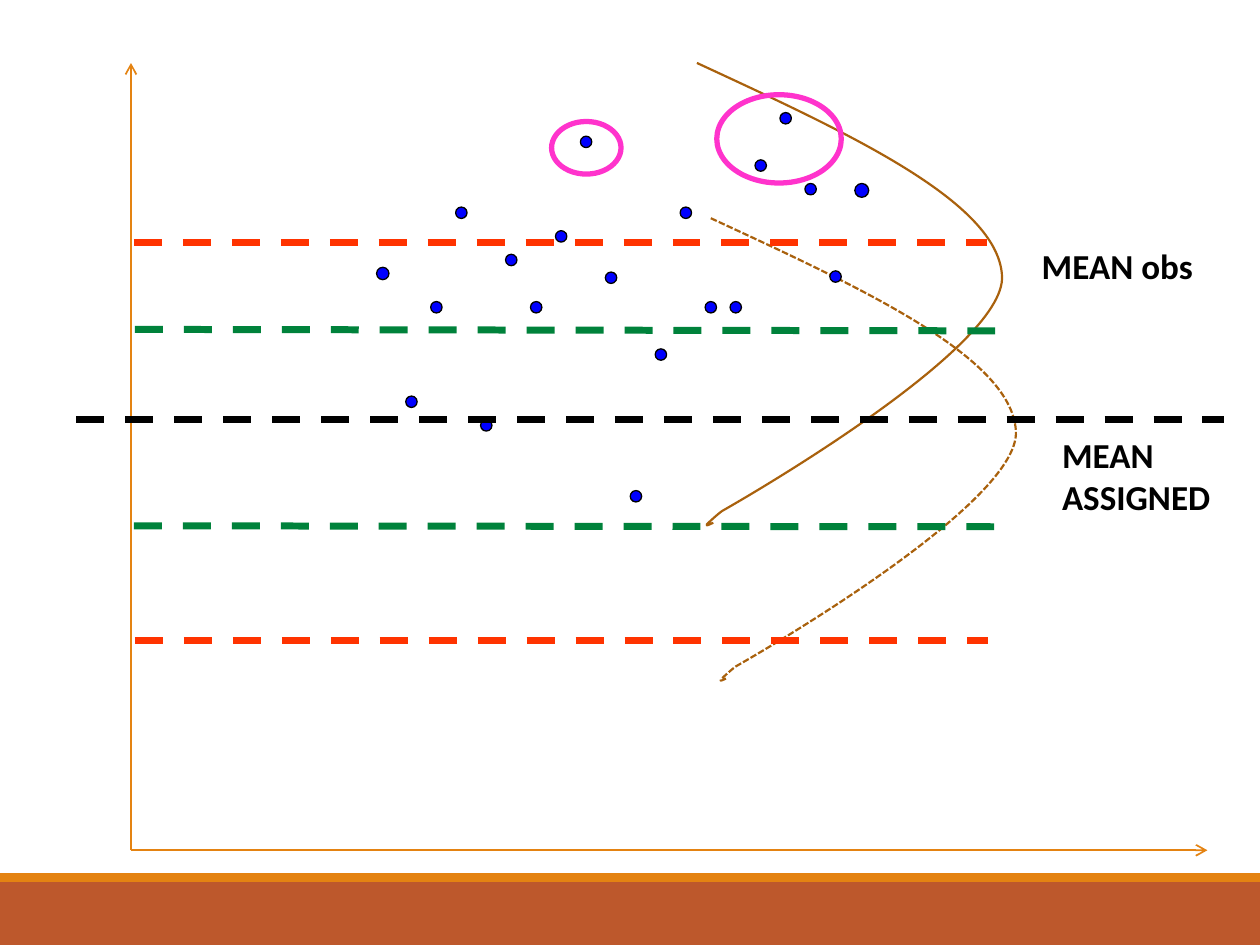
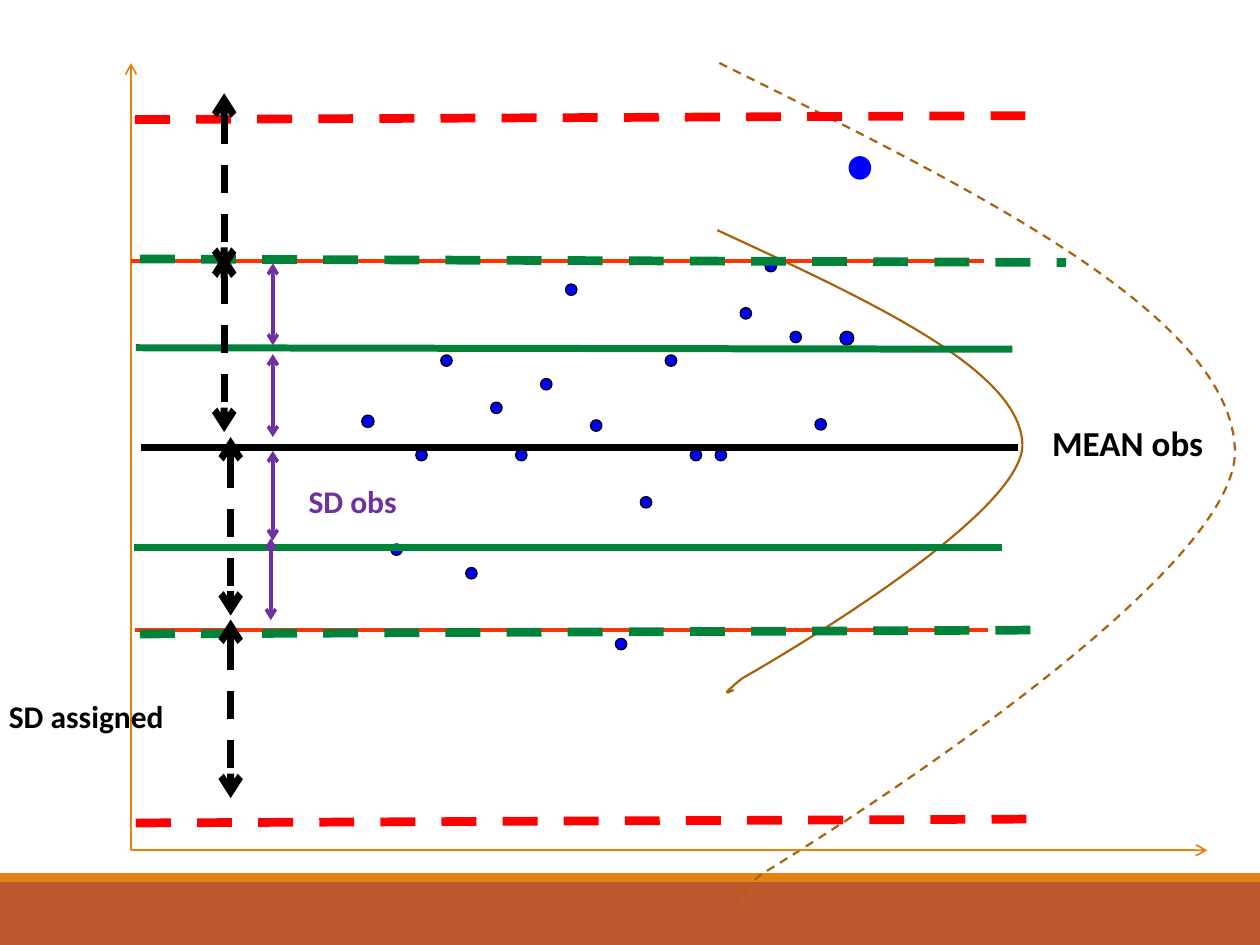
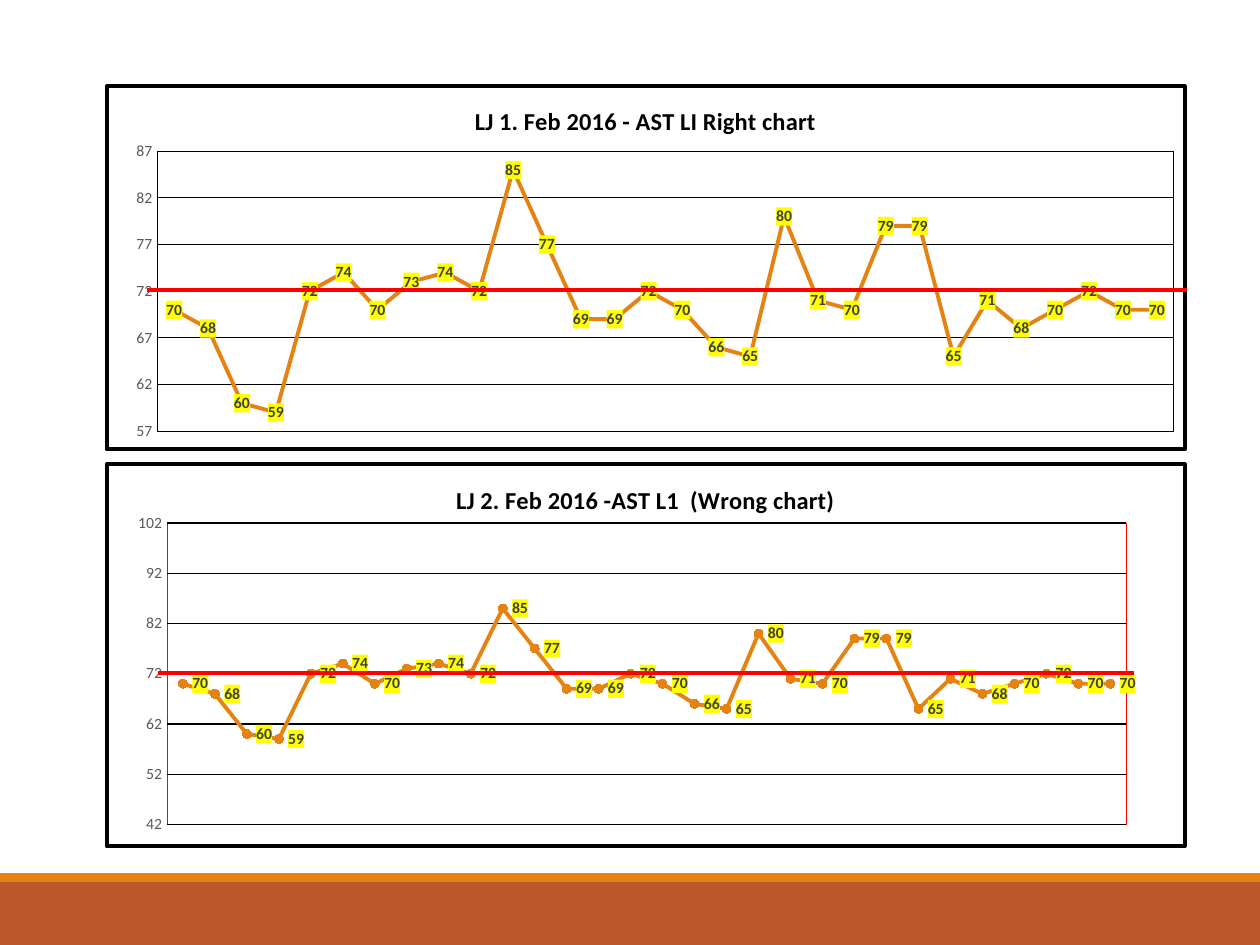
from pptx import Presentation
from pptx.chart.data import CategoryChartData
from pptx.dml.color import RGBColor
from pptx.enum.chart import XL_CHART_TYPE, XL_LABEL_POSITION, XL_MARKER_STYLE, XL_TICK_MARK
from pptx.enum.dml import MSO_LINE
from pptx.enum.shapes import MSO_CONNECTOR, MSO_SHAPE
from pptx.oxml import parse_xml
from pptx.oxml.ns import nsdecls
from pptx.util import Cm, Pt

RECTANGLE, OVAL = MSO_SHAPE.RECTANGLE, MSO_SHAPE.OVAL
STRAIGHT = MSO_CONNECTOR.STRAIGHT
DASH, SHORT_DASH = MSO_LINE.DASH, MSO_LINE.SQUARE_DOT
CIRCLE, NO_TICKS = XL_MARKER_STYLE.CIRCLE, XL_TICK_MARK.NONE
CENTER, RIGHT = XL_LABEL_POSITION.CENTER, XL_LABEL_POSITION.RIGHT
LINE, STACKED_LINE = XL_CHART_TYPE.LINE_MARKERS, XL_CHART_TYPE.LINE_MARKERS_STACKED

FONT = "Calibri"
HEX = {
    "orange": "E48312", "rust": "BD582C", "brown": "A9610D", "blue": "0000FF",
    "black": "000000", "white": "FFFFFF", "vermilion": "FF3300", "red": "FF0000",
    "green": "00823B", "purple": "7030A0", "pink": "FF33CC", "yellow": "FFFF00",
    "axis grey": "595959", "label grey": "404040",
}
COLOR = {name: RGBColor.from_string(value) for name, value in HEX.items()}


def add_line(slide, x1, y1, x2, y2, color, width, dash=None, arrows=()):
    line = slide.shapes.add_connector(STRAIGHT, Cm(x1), Cm(y1), Cm(x2), Cm(y2))
    line.line.color.rgb = COLOR[color]
    line.line.width = Pt(width)
    if dash:
        line.line.dash_style = dash
    properties = line.element.spPr
    for end in arrows:
        properties.ln.append(parse_xml(f'<a:{end} {nsdecls("a")} type="arrow"/>'))
    properties.append(parse_xml(f'<a:effectLst {nsdecls("a")}/>'))


def area_format(fill=None, border=None, width=0.5):
    """Fill and border for a part of a chart."""
    paint = {key: f'<a:solidFill><a:srgbClr val="{HEX[key]}"/></a:solidFill>' if key
             else "<a:noFill/>" for key in (fill, border)}
    return parse_xml(f'<c:spPr {nsdecls("c", "a")}>{paint[fill]}'
                     f'<a:ln w="{Pt(width)}">{paint[border]}</a:ln></c:spPr>')


prs = Presentation()
prs.slide_width, prs.slide_height = Cm(25.4), Cm(19.05)
blank = prs.slide_layouts[6]
shifted_mean, wide_sd, levey_jennings = [prs.slides.add_slide(blank) for _ in range(3)]

# Bottom bands, placed on the master
master_tree = prs.slide_master.element.cSld.spTree
for number, (top, height, color) in enumerate([(17.78, 1.27, "rust"), (17.6, 0.18, "orange")]):
    band = shifted_mean.shapes.add_shape(RECTANGLE, 0, Cm(top), prs.slide_width, Cm(height))
    band.shadow.inherit = False
    band.fill.solid()
    band.fill.fore_color.rgb = COLOR[color]
    band.line.fill.background()
    band.element.nvSpPr.cNvPr.id = 101 + number
    master_tree.append(band.element)

# Control results: (column, level, diameter)
LEVELS = [12, 8, 4, 13, 6, 8, 5, 1, 6.75, 16, 10, 4, 8, 8, 2, 0, 3, 6.7]
RESULTS = [(column, level, 0.23) for column, level in enumerate(LEVELS)]
RESULTS += [(18, 3, 0.28), (-1.17, 6.55, 0.25)]
COLUMN_STEP, LEVEL_STEP = 8.55 / 17, 7.62 / 16

# Bell curve on its side: a start point, then three points for each cubic segment
BELL = [(0, 0), (3.02, 1.4), (6.07, 2.79), (6.15, 4.29), (6.25, 5.79), (0.53, 9.02),
        (0.53, 9.02), (0.48, 9.04), (0.25, 9.25), (0.2, 9.3), (0.18, 9.35), (0.25, 9.3),
        (0.33, 9.27)]

TAIL, BOTH = ["tailEnd"], ["headEnd", "tailEnd"]
AXES = [(2.64, 17.14, 2.64, 1.27, "orange", 1, None, TAIL),
        (2.64, 17.14, 24.34, 17.14, "orange", 1, None, TAIL)]
SD_ASSIGNED = [(x, y, x, y + 3.6, "black", 4, DASH, BOTH)
               for x, y in [(4.65, 12.49), (4.65, 8.81), (4.52, 1.88), (4.52, 5.11)]]
SD_OBSERVED = [(x, top, x, bottom, "purple", 2, None, BOTH)
               for x, top, bottom in [(5.5, 9.09, 10.9), (5.5, 7.14, 8.81),
                                      (5.5, 5.31, 6.96), (5.46, 10.85, 12.5)]]

control_charts = [
    {"slide": shifted_mean, "first result": (8.18, 2.27),
     "curves": [(14.05, 1.27, 1, 1, None), (14.33, 4.4, 1, 1, SHORT_DASH)],
     "marks": [(11.12, 2.45, 1.4, 1.06, None, "pink", 3),
               (14.45, 1.91, 2.51, 1.78, None, "pink", 3)],
     "lines": [(1.54, 8.46, 24.67, 8.46, "black", 4, DASH),
               (2.7, 4.88, 19.89, 4.88, "vermilion", 4, DASH),
               (2.72, 12.91, 19.91, 12.91, "vermilion", 4, DASH),
               (2.72, 6.64, 20.4, 6.67, "green", 4, DASH),
               (2.7, 10.6, 20.38, 10.62, "green", 4, DASH)],
     "labels": [("MEAN obs", 20.75, 4.8, 3.61, 1.12, 20, "black"),
                ("MEAN ASSIGNED", 21.16, 8.61, 3.61, 1.96, 20, "black")]},
    {"slide": wide_sd, "first result": (7.88, 5.25),
     "curves": [(14.46, 4.64, 1, 1, None), (14.5, 1.27, 1.69, 1.81, DASH)],
     "marks": [(17.13, 3.17, 0.41, 0.43, "blue", "blue", 1.25)],
     "lines": [(2.72, 12.7, 19.91, 12.7, "vermilion", 2),
               (2.85, 9.02, 20.52, 9.02, "black", 4),
               (2.74, 7.01, 20.41, 7.04, "green", 4),
               (2.7, 11.04, 20.19, 11.04, "green", 4),
               (2.82, 12.78, 21.13, 12.7, "green", 5, DASH),
               (2.64, 5.26, 19.84, 5.26, "vermilion", 2),
               (2.82, 5.22, 21.49, 5.29, "green", 5, DASH),
               (2.74, 16.59, 21.06, 16.51, "red", 5, DASH),
               (2.72, 2.41, 21.03, 2.33, "red", 5, DASH),
               *SD_ASSIGNED, *SD_OBSERVED],
     "labels": [("MEAN obs", 20.96, 8.38, 3.61, 1.12, 20, "black"),
                ("SD obs", 5.97, 9.6, 2.36, 1.02, 18, "purple"),
                ("SD assigned", -0.07, 13.92, 4.09, 1.02, 18, "black")]},
]

for control in control_charts:
    slide = control["slide"]

    # Distribution curves
    for left, top, x_scale, y_scale, dash in control["curves"]:
        points = [(Cm(left + x * x_scale), Cm(top + y * y_scale)) for x, y in BELL]
        outline = slide.shapes.build_freeform(*points[0])
        outline.add_line_segments(points[1:], close=False)
        curve = outline.convert_to_shape()
        sides = curve.element.xpath(".//a:lnTo")
        for first in range(0, len(sides), 3):
            cubic = parse_xml(f'<a:cubicBezTo {nsdecls("a")}/>')
            sides[first].addprevious(cubic)
            for side in sides[first:first + 3]:
                cubic.append(side[0])
                side.getparent().remove(side)
        curve.shadow.inherit = False
        curve.fill.background()
        curve.line.color.rgb = COLOR["brown"]
        curve.line.width = Pt(1.25)
        if dash:
            curve.line.dash_style = dash

    # Results as one group, and the rings or dots that point out outliers
    first_x, first_y = control["first result"]
    results = [(first_x + column * COLUMN_STEP, first_y + level * LEVEL_STEP,
                size, size, "blue", "black", 0.75) for column, level, size in RESULTS]
    result_group = slide.shapes.add_group_shape()
    for holder, ovals in [(result_group, results), (slide, control["marks"])]:
        for left, top, width, height, fill, border, weight in ovals:
            oval = holder.shapes.add_shape(OVAL, Cm(left), Cm(top), Cm(width), Cm(height))
            oval.shadow.inherit = False
            if fill:
                oval.fill.solid()
                oval.fill.fore_color.rgb = COLOR[fill]
            else:
                oval.fill.background()
            oval.line.color.rgb = COLOR[border]
            oval.line.width = Pt(weight)

    # Axes, means, limits and SD arrows
    for line in AXES + control["lines"]:
        add_line(slide, *line)

    for text, left, top, width, height, size, color in control["labels"]:
        label = slide.shapes.add_textbox(Cm(left), Cm(top), Cm(width), Cm(height)).text_frame
        label.word_wrap = True
        label.text = text
        font = label.paragraphs[0].font
        font.name, font.size, font.bold = FONT, Pt(size), True
        font.color.rgb = COLOR[color]

# Levey-Jennings charts of the same results on two scales
AST = [70, 68, 60, 59, 72, 74, 70, 73, 74, 72, 85, 77, 69, 69, 72,
       70, 66, 65, 80, 71, 70, 79, 79, 65, 71, 68, 70, 72, 70, 70]
ast_data = CategoryChartData()
ast_data.categories = [str(day) for day in range(1, len(AST) + 1)]
ast_data.add_series("Series 1", AST)

lj_charts = [
    ("LJ 1. Feb 2016 - AST LI Right chart", LINE, 1.7, 7.4, (57, 87, 5), CENTER, "black",
     (0.047, 0.179, 0.943, 0.771)),
    ("LJ 2. Feb 2016 -AST L1  (Wrong chart)", STACKED_LINE, 9.32, 7.78, (42, 102, 10), RIGHT, "red",
     (0.056, 0.154, 0.89, 0.789)),
]
for title, kind, top, height, scale, label_place, frame, plot_box in lj_charts:
    chart = levey_jennings.shapes.add_chart(
        kind, Cm(2.11), Cm(top), Cm(21.81), Cm(height), ast_data).chart
    chart.has_legend = False
    chart.font.name, chart.font.size = FONT, Pt(10)
    chart.font.color.rgb = COLOR["black"]
    chart.has_title = True
    chart.chart_title.text_frame.text = title
    title_font = chart.chart_title.text_frame.paragraphs[0].font
    title_font.name, title_font.size, title_font.bold = FONT, Pt(14), True
    title_font.color.rgb = COLOR["black"]

    chart.category_axis.visible = False
    values = chart.value_axis
    values.minimum_scale, values.maximum_scale, values.major_unit = scale
    values.major_tick_mark = values.minor_tick_mark = NO_TICKS
    values.format.line.fill.background()
    values.major_gridlines.format.line.color.rgb = COLOR["black"]
    values.major_gridlines.format.line.width = Pt(0.75)
    values.tick_labels.number_format = "0"
    values.tick_labels.number_format_is_linked = False
    values.tick_labels.font.name, values.tick_labels.font.size = FONT, Pt(9)
    values.tick_labels.font.color.rgb = COLOR["axis grey"]

    chart.plots[0].vary_by_categories = False
    ast = chart.plots[0].series[0]
    ast.smooth = False
    ast.format.line.color.rgb = COLOR["orange"]
    ast.format.line.width = Pt(2.25)
    ast.marker.style, ast.marker.size = CIRCLE, 5
    ast.marker.format.fill.solid()
    ast.marker.format.fill.fore_color.rgb = COLOR["orange"]
    ast.marker.format.line.color.rgb = COLOR["orange"]
    labels = ast.data_labels
    labels.show_value = True
    labels.position = label_place
    labels.number_format, labels.number_format_is_linked = "0", False
    labels.font.name, labels.font.size, labels.font.bold = FONT, Pt(9), True
    labels.font.color.rgb = COLOR["label grey"]

    # Yellow labels, plot frame, chart border and plot position
    space = chart.element
    space.xpath(".//c:ser/c:dLbls/c:txPr")[0].addprevious(area_format("yellow"))
    space.chart.addnext(area_format("white", "black", 2.25))
    plot_area = space.chart.plotArea
    plot_area.append(area_format(None, frame))
    for automatic in plot_area.xpath("c:layout"):
        plot_area.remove(automatic)
    box = "".join(f'<c:{key} val="{value}"/>' for key, value in zip("xywh", plot_box))
    plot_area.insert(0, parse_xml(
        f'<c:layout {nsdecls("c")}><c:manualLayout><c:layoutTarget val="inner"/>'
        f'<c:xMode val="edge"/><c:yMode val="edge"/>{box}</c:manualLayout></c:layout>'))

# Target means
add_line(levey_jennings, 2.97, 5.84, 23.92, 5.84, "red", 2.25)
add_line(levey_jennings, 3.18, 13.56, 22.86, 13.56, "red", 2.25)

prs.save("out.pptx")
